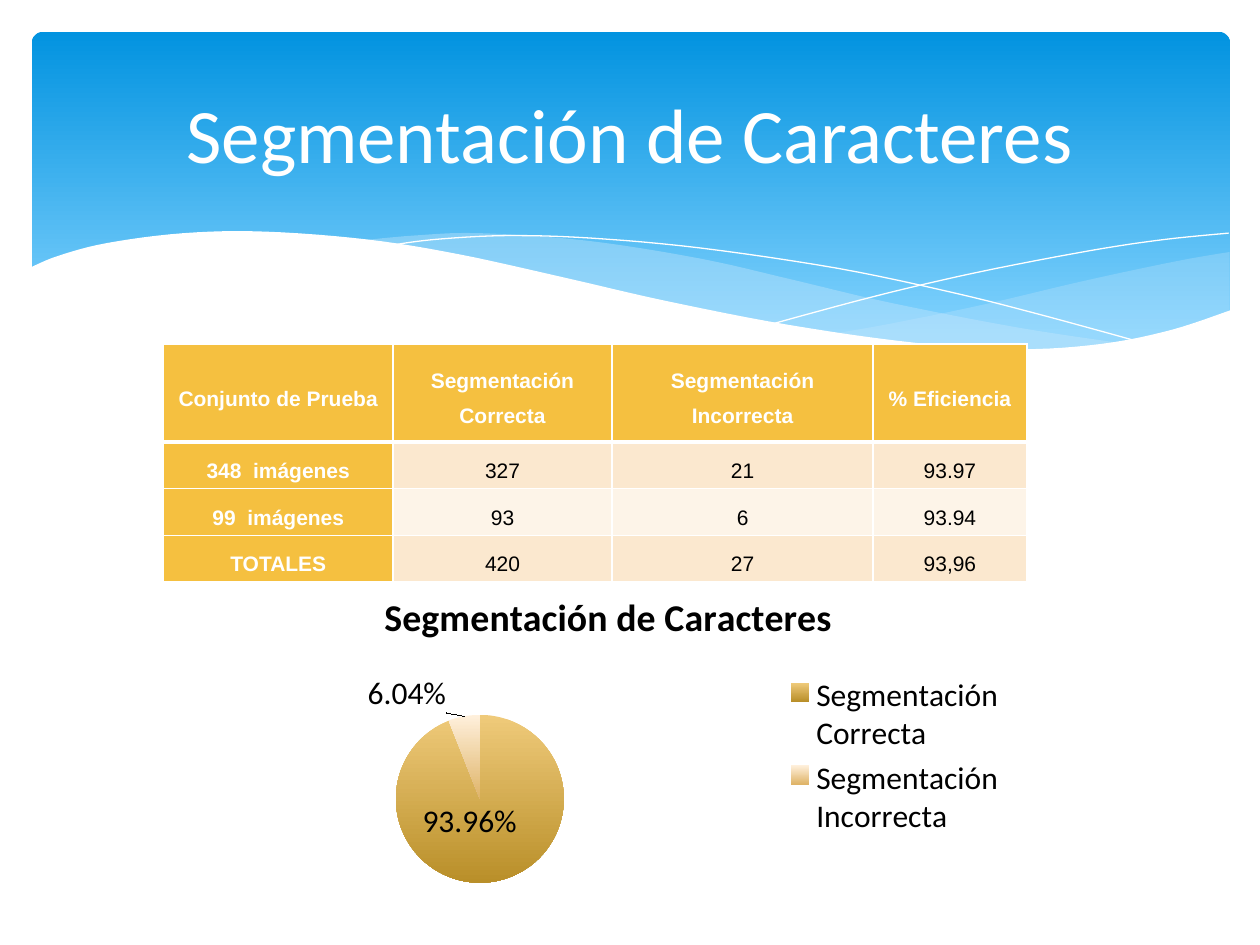
from dataclasses import dataclass
from typing import Optional

from lxml import etree
from pptx import Presentation
from pptx.chart.data import CategoryChartData
from pptx.dml.color import RGBColor
from pptx.enum.chart import XL_CHART_TYPE, XL_LABEL_POSITION as LabelPos, XL_LEGEND_POSITION
from pptx.enum.shapes import MSO_SHAPE
from pptx.enum.text import MSO_ANCHOR, PP_ALIGN
from pptx.oxml import parse_xml
from pptx.oxml.ns import nsdecls, qn
from pptx.util import Cm, Pt

WHITE = RGBColor(0xFF, 0xFF, 0xFF)
BLACK = RGBColor(0x00, 0x00, 0x00)
SKY_TOP = RGBColor(0x02, 0x93, 0xE0)
SKY_BOTTOM = RGBColor(0x83, 0xD3, 0xFE)
MIST = RGBColor(0xC6, 0xE7, 0xFC)
AMBER = RGBColor(0xF5, 0xC0, 0x40)
PEACH = RGBColor(0xFB, 0xE8, 0xCF)
CREAM = RGBColor(0xFD, 0xF4, 0xE8)
GOLD_TOP = RGBColor(0xEF, 0xCA, 0x7A)
GOLD_BOTTOM = RGBColor(0xB9, 0x8F, 0x29)
PALE_TOP = RGBColor(0xFF, 0xF0, 0xDC)
PALE_BOTTOM = RGBColor(0xDF, 0xB4, 0x68)

HEADING = "Segmentación de Caracteres"
Point = tuple[float, float]


@dataclass
class Wave:
    """Smooth edges in centimetres; filled when it has a fill, else a white line."""
    edges: list[list[Point]]
    fill: Optional[RGBColor] = None
    opacity: int = 100


@dataclass
class Slice:
    name: str
    value: float
    top: RGBColor
    bottom: RGBColor
    label_shift: Point


WAVES = [
    Wave([[(24.79, 5.08), (23.75, 5.26), (21.87, 5.66), (19.79, 6.15), (17.93, 6.53),
           (16.79, 6.73)],
          [(16.79, 6.73), (18.59, 6.96), (20.68, 7.06), (22.38, 6.93), (23.75, 6.65),
           (24.79, 6.27)]], MIST, 29),
    Wave([[(22.68, 6.93), (20.5, 6.6), (17.93, 6.1), (15.98, 5.64), (14.1, 5.21),
           (11.81, 4.85), (9.65, 4.7), (8.33, 4.75), (7.26, 4.85)],
          [(7.26, 4.85), (9.19, 5.16), (11.4, 5.64), (13.46, 6.1), (15.7, 6.55),
           (18.01, 6.91), (20.22, 7.06), (21.54, 7.04), (22.68, 6.93)]], MIST, 40),
    Wave([[(7.85, 4.95), (8.74, 4.83), (10.19, 4.75), (11.91, 4.8), (14.12, 5),
           (16.89, 5.41), (19.3, 5.92), (21.11, 6.38), (23.04, 6.91)]]),
    Wave([[(15.57, 6.53), (17.65, 5.97), (19.71, 5.49), (22, 5.05), (23.47, 4.83),
           (24.77, 4.7)]]),
    Wave([[(24.82, 6.25), (23.62, 6.65), (22.23, 6.93), (20.55, 7.04), (18.44, 6.91),
           (15.9, 6.55), (13.44, 6.07), (11.35, 5.59), (9.27, 5.13), (7.42, 4.83),
           (5.36, 4.67), (3.71, 4.7), (2.16, 4.9), (1.17, 5.16), (0.58, 5.41)],
          [(0.58, 5.41), (0.58, 8.36)],
          [(0.58, 8.36), (24.82, 8.36)]], WHITE),
]

SLICES = [
    Slice("Segmentación Correcta", 0.9396, GOLD_TOP, GOLD_BOTTOM, (-0.09, -0.23)),
    Slice("Segmentación Incorrecta", 0.0604, PALE_TOP, PALE_BOTTOM, (-0.02, 0.01)),
]

COLUMN_WIDTHS = [4.62, 4.42, 5.26, 3.1]
ROW_HEIGHTS = [1.98, 0.94, 0.94, 0.94]
ROWS = [
    ["Conjunto de Prueba", "Segmentación Correcta", "Segmentación Incorrecta", "% Eficiencia"],
    ["348  imágenes", "327", "21", "93.97"],
    ["99  imágenes", "93", "6", "93.94"],
    ["TOTALES", "420", "27", "93,96"],
]


def smooth(knots: list[Point], steps: int = 6) -> list[Point]:
    """Return points of the Catmull-Rom curve through the knots."""
    padded = [knots[0], *knots, knots[-1]]
    curve = [knots[0]]
    for a, b, c, d in zip(padded, padded[1:], padded[2:], padded[3:]):
        for i in range(1, steps + 1):
            t = i / steps
            curve.append(tuple(
                (2 * q + (m - k) * t + (2 * k - 5 * q + 4 * m - n) * t ** 2
                 + (3 * q - k - 3 * m + n) * t ** 3) / 2
                for k, q, m, n in zip(a, b, c, d)))
    return curve


def set_gradient(fill, top: RGBColor, bottom: RGBColor, end: float = 1.0) -> None:
    fill.gradient()
    fill.gradient_angle = 270
    for stop, color, position in zip(fill.gradient_stops, (top, bottom), (0, end)):
        stop.color.rgb = color
        stop.position = position


def draw_wave(s, wave: Wave) -> None:
    points = [(Cm(x), Cm(y)) for edge in wave.edges for x, y in smooth(edge)]
    builder = s.shapes.build_freeform(*points[0])
    builder.add_line_segments(points[1:], close=wave.fill is not None)
    sp = builder.convert_to_shape()
    sp.shadow.inherit = False
    if wave.fill is None:
        sp.fill.background()
        sp.line.color.rgb = WHITE
        sp.line.width = Pt(0)
        return
    sp.line.fill.background()
    sp.fill.solid()
    sp.fill.fore_color.rgb = wave.fill
    if wave.opacity < 100:
        color = sp.fill._xPr.find(".//" + qn("a:srgbClr"))
        etree.SubElement(color, qn("a:alpha"), val=str(wave.opacity * 1000))


def draw_header(s) -> None:
    sp = s.shapes.add_shape(MSO_SHAPE.ROUNDED_RECTANGLE, Cm(0.64), Cm(0.64), Cm(24.16), Cm(6.86))
    sp.adjustments[0] = 0.034
    sp.shadow.inherit = False
    sp.line.fill.background()
    set_gradient(sp.fill, SKY_TOP, SKY_BOTTOM, 0.9)
    for wave in WAVES:
        draw_wave(s, wave)


def set_font(font, name: str, size: float, color: RGBColor, bold: bool = False) -> None:
    font.name, font.size, font.bold = name, Pt(size), bold
    font.color.rgb = color


def draw_title(s) -> None:
    tf = s.shapes.add_textbox(Cm(1.27), Cm(0.94), Cm(22.86), Cm(3.48)).text_frame
    tf.word_wrap = True
    tf.vertical_anchor = MSO_ANCHOR.MIDDLE
    p = tf.paragraphs[0]
    p.text = HEADING
    p.alignment = PP_ALIGN.CENTER
    set_font(p.runs[0].font, "Calibri", 44, WHITE)


def manual_layout(inner: bool = False, **values: float):
    """Build a chart layout; x and y are shifts unless a width is given."""
    items = '<c:layoutTarget val="inner"/>' if inner else ""
    if "w" in values:
        items += '<c:xMode val="edge"/><c:yMode val="edge"/>'
    items += "".join(f'<c:{key} val="{value}"/>' for key, value in values.items())
    return parse_xml(f'<c:layout {nsdecls("c")}><c:manualLayout>{items}</c:manualLayout></c:layout>')


def place(parent, layout) -> None:
    for old in parent.findall(qn("c:layout")):
        parent.remove(old)
    before = [parent.find(qn(tag)) for tag in ("c:idx", "c:legendPos")]
    index = max((parent.index(el) + 1 for el in before if el is not None), default=0)
    parent.insert(index, layout)


def draw_chart(s) -> None:
    data = CategoryChartData(number_format="0.00%")
    data.categories = [item.name for item in SLICES]
    data.add_series("Series 1", [item.value for item in SLICES])
    chart = s.shapes.add_chart(XL_CHART_TYPE.PIE, Cm(3.91), Cm(11.48), Cm(16.71), Cm(7.52),
                               data).chart
    set_font(chart.font, "Calibri", 18, BLACK)
    chart.has_title = True
    chart.chart_title.text_frame.text = HEADING
    set_font(chart.chart_title.text_frame.paragraphs[0].runs[0].font, "Calibri", 21.6, BLACK, True)
    chart.has_legend = True
    chart.legend.position = XL_LEGEND_POSITION.RIGHT
    chart.legend.include_in_layout = False
    place(chart.legend._element, manual_layout(x=0.71, y=0.27, w=0.27, h=0.46))

    plot = chart.plots[0]
    plot.vary_by_categories = True
    place(chart._chartSpace.chart.plotArea, manual_layout(True, x=0.24, y=0.39, w=0.21, h=0.45))
    labels = plot.series[0].data_labels
    labels.show_value = True
    labels.number_format = "0.00%"
    labels.number_format_is_linked = False
    for i, item in enumerate(SLICES):
        point = plot.series[0].points[i]
        set_gradient(point.format.fill, item.top, item.bottom)
        point.data_label.position = LabelPos.OUTSIDE_END
        set_font(point.data_label.font, "Calibri", 18, BLACK)
        label = labels._element.findall(qn("c:dLbl"))[i]
        label.find(".//" + qn("a:bodyPr")).set("wrap", "none")
        x, y = item.label_shift
        place(label, manual_layout(x=x, y=y))


def set_borders(cell, top: float, bottom: float) -> None:
    tc_pr = cell._tc.get_or_add_tcPr()
    for i, (side, width) in enumerate(zip("LRTB", (1, 1, top, bottom))):
        tc_pr.insert(i, parse_xml(
            f'<a:ln{side} {nsdecls("a")} w="{Pt(width)}"><a:solidFill>'
            f'<a:srgbClr val="{WHITE}"/></a:solidFill></a:ln{side}>'))


def draw_table(s) -> None:
    table = s.shapes.add_table(len(ROWS), len(COLUMN_WIDTHS), Cm(3.3), Cm(6.93),
                               Cm(sum(COLUMN_WIDTHS)), Cm(sum(ROW_HEIGHTS))).table
    for column, width in zip(table.columns, COLUMN_WIDTHS):
        column.width = Cm(width)
    for i, (row, height) in enumerate(zip(table.rows, ROW_HEIGHTS)):
        row.height = Cm(height)
        for j, cell in enumerate(row.cells):
            heading = i == 0 or j == 0
            cell.fill.solid()
            cell.fill.fore_color.rgb = AMBER if heading else PEACH if i % 2 else CREAM
            set_borders(cell, top=3 if i == 1 else 1, bottom=3 if i == 0 else 1)
            cell.vertical_anchor = MSO_ANCHOR.MIDDLE
            cell.margin_left = cell.margin_right = Cm(0.18)
            cell.margin_top = cell.margin_bottom = Cm(0)
            p = cell.text_frame.paragraphs[0]
            p.text = ROWS[i][j]
            p.alignment = PP_ALIGN.CENTER
            p.line_spacing, p.space_after = 1.5, Pt(2)
            set_font(p.runs[0].font, "Arial", 12, WHITE if heading else BLACK, heading)


def main() -> None:
    prs = Presentation()
    prs.slide_width, prs.slide_height = Cm(25.4), Cm(19.05)
    s = prs.slides.add_slide(prs.slide_layouts[6])
    draw_header(s)
    draw_title(s)
    draw_chart(s)
    draw_table(s)
    prs.save("out.pptx")


if __name__ == "__main__":
    main()
